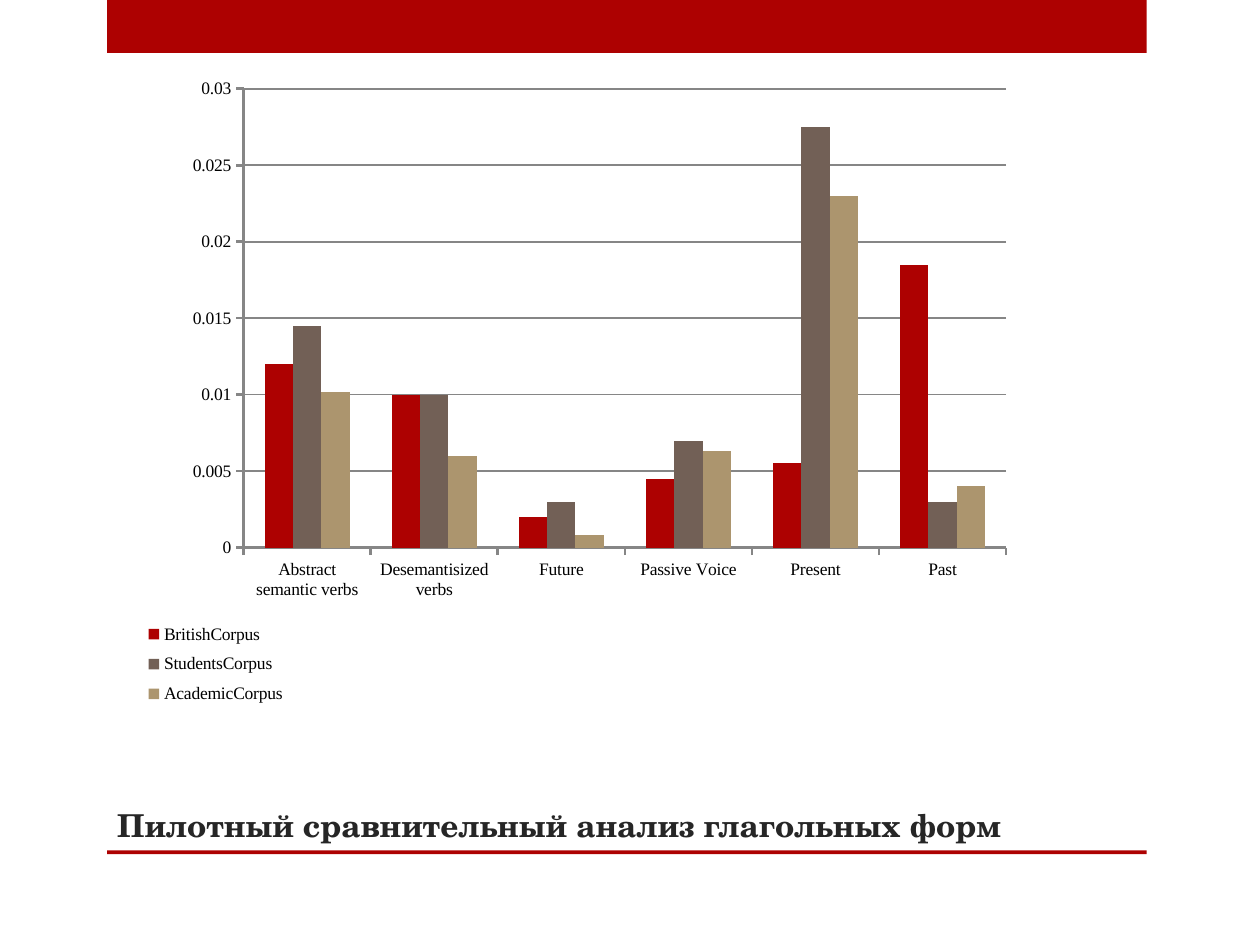
from lxml import etree
from pptx import Presentation
from pptx.chart.data import CategoryChartData
from pptx.dml.color import RGBColor
from pptx.enum.chart import XL_CHART_TYPE, XL_LEGEND_POSITION, XL_TICK_MARK
from pptx.enum.shapes import MSO_SHAPE
from pptx.enum.text import MSO_ANCHOR, MSO_AUTO_SIZE, PP_ALIGN
from pptx.oxml.ns import qn
from pptx.util import Inches, Pt

RED = RGBColor(0xAD, 0x01, 0x01)
BROWN = RGBColor(0x72, 0x60, 0x56)
TAN = RGBColor(0xAC, 0x95, 0x6E)
INK = RGBColor(0x26, 0x26, 0x26)
BLACK = RGBColor(0, 0, 0)
GREY = RGBColor(0x86, 0x86, 0x86)

RECTANGLE = MSO_SHAPE.RECTANGLE
CLUSTERED = XL_CHART_TYPE.COLUMN_CLUSTERED
RIGHT = XL_LEGEND_POSITION.RIGHT
OUTSIDE = XL_TICK_MARK.OUTSIDE
BOTTOM = MSO_ANCHOR.BOTTOM
LEFT = PP_ALIGN.LEFT
NO_FIT = MSO_AUTO_SIZE.NONE

WIDTH, HEIGHT = 10, 7.5
BAND_LEFT, BAND_WIDTH = 0.85, 8.25

VERB_FORMS = ["Abstract semantic verbs", "Desemantisized verbs", "Future",
              "Passive Voice", "Present", "Past"]
CORPORA = [
    ("BritishCorpus", RED, [0.012, 0.01, 0.002, 0.0045, 0.0055, 0.0185]),
    ("StudentsCorpus", BROWN, [0.0145, 0.01, 0.003, 0.007, 0.0275, 0.003]),
    ("AcademicCorpus", TAN, [0.0102, 0.006, 0.0008, 0.0063, 0.023, 0.004]),
]


def add_band(slide, top, height):
    """Draw one red band across the content width."""
    band = slide.shapes.add_shape(RECTANGLE, Inches(BAND_LEFT), Inches(top),
                                  Inches(BAND_WIDTH), Inches(height))
    band.shadow.inherit = False
    band.fill.solid()
    band.fill.fore_color.rgb = RED
    band.line.fill.background()


def format_font(font, name, size, color, bold=False):
    """Set typeface, size, colour and weight."""
    font.name = name
    font.size = Pt(size)
    font.color.rgb = color
    font.bold = bold


def write_text(frame, text, anchor=BOTTOM, align=LEFT, **font_format):
    """Put one formatted line of text in a frame."""
    frame.word_wrap = True
    frame.auto_size = NO_FIT
    frame.vertical_anchor = anchor
    paragraph = frame.paragraphs[0]
    paragraph.alignment = align
    run = paragraph.add_run()
    run.text = text
    format_font(run.font, **font_format)


def add_title(slide, text):
    """Place the slide title above the lower band."""
    title = slide.shapes.title
    title.left, title.top = Inches(0.83), Inches(6.27)
    title.width, title.height = Inches(7.42), Inches(0.48)
    write_text(title.text_frame, text, name="TeX Gyre Schola", size=18,
               color=INK, bold=True)


def make_layout(x, y, w, h, inner=False):
    """Return a manual chart layout given as shares of the chart."""
    layout = etree.Element(qn("c:layout"))
    manual = etree.SubElement(layout, qn("c:manualLayout"))
    settings = [("layoutTarget", "inner")] if inner else []
    settings += [("xMode", "edge"), ("yMode", "edge"),
                 ("x", x), ("y", y), ("w", w), ("h", h)]
    for tag, value in settings:
        etree.SubElement(manual, qn(f"c:{tag}")).set("val", str(value))
    return layout


def replace_layout(parent, position, layout):
    """Swap the layout of a chart part for a manual one."""
    for old in parent.findall(qn("c:layout")):
        parent.remove(old)
    parent.insert(position, layout)


def format_axis(axis):
    """Give an axis grey lines and outside ticks."""
    axis.format.line.color.rgb = GREY
    axis.format.line.width = Pt(1.5)
    axis.major_tick_mark = OUTSIDE
    axis.minor_tick_mark = XL_TICK_MARK.NONE


def add_corpus_chart(slide):
    """Add the clustered columns comparing the corpora."""
    data = CategoryChartData()
    data.categories = VERB_FORMS
    for name, _, values in CORPORA:
        data.add_series(name, values)
    chart = slide.shapes.add_chart(CLUSTERED, Inches(0.51), Inches(0.44),
                                   Inches(8.9), Inches(5.28), data).chart
    format_font(chart.font, "Times New Roman", 10, BLACK)
    chart.has_title = False

    columns = chart.plots[0]
    columns.gap_width = 150
    columns.overlap = 0
    columns.vary_by_categories = False
    for series, (_, color, _) in zip(columns.series, CORPORA):
        series.format.fill.solid()
        series.format.fill.fore_color.rgb = color

    format_axis(chart.category_axis)
    frequency = chart.value_axis
    format_axis(frequency)
    frequency.minimum_scale, frequency.maximum_scale = 0, 0.03
    frequency.major_unit = 0.005
    frequency.has_major_gridlines = True
    frequency.major_gridlines.format.line.color.rgb = GREY
    frequency.major_gridlines.format.line.width = Pt(1)

    chart.has_legend = True
    legend = chart.legend
    legend.position = RIGHT
    legend.include_in_layout = False
    plot_area = columns._element.getparent()
    replace_layout(plot_area, 0, make_layout(0.16, 0.05, 0.68, 0.69, inner=True))
    replace_layout(legend._element, 1, make_layout(0.04, 0.84, 0.19, 0.15))


def main():
    """Build and save the slide."""
    deck = Presentation()
    deck.slide_width, deck.slide_height = Inches(WIDTH), Inches(HEIGHT)
    slide = deck.slides.add_slide(deck.slide_layouts[5])
    add_band(slide, top=0, height=0.42)
    add_band(slide, top=0.9 * HEIGHT, height=0.03)
    add_title(slide, "Пилотный сравнительный анализ глагольных форм")
    add_corpus_chart(slide)
    deck.save("out.pptx")


if __name__ == "__main__":
    main()
